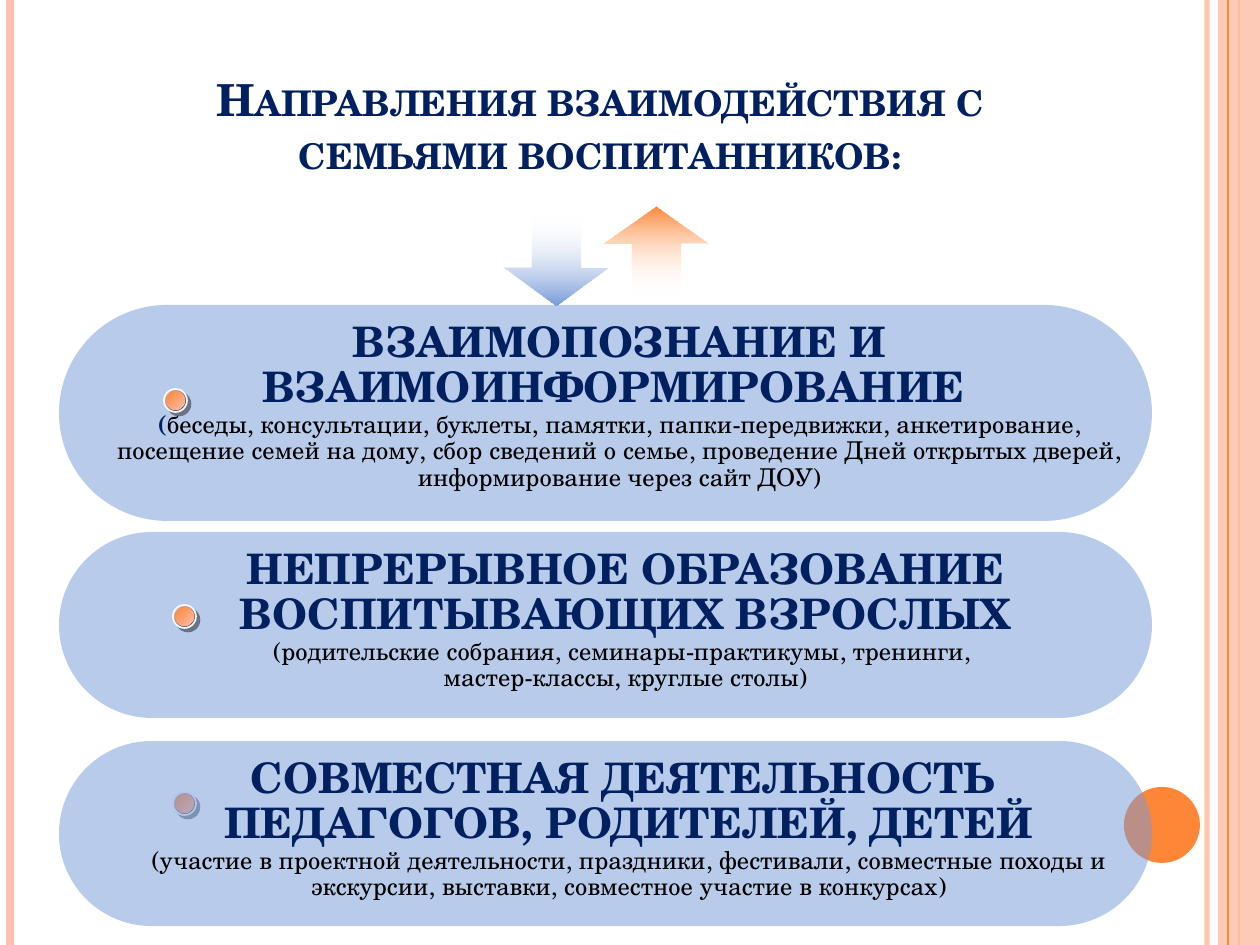
from lxml.etree import SubElement
from pptx import Presentation
from pptx.dml.color import RGBColor
from pptx.enum.shapes import MSO_CONNECTOR, MSO_SHAPE
from pptx.enum.text import MSO_ANCHOR, MSO_AUTO_SIZE, PP_ALIGN
from pptx.oxml.ns import qn
from pptx.util import Pt

PX = 914400 / 126
FONT = "TeX Gyre Schola"
COLORS = {
    "white": "FFFFFF", "black": "000000", "navy": "002060", "blue": "7598D9",
    "orange": "FE8637", "peach": "FEC3AE", "dot_light": "FEBEA8",
    "rim_light": "DDDDE1", "rim_dark": "223864", "rim_line": "F8F8F8",
    "shadow": "1C1C1C",
}
# pill (top, height), text box, dot corner, paragraphs of (text, style) runs
DIRECTIONS = [
    ((305, 216), (98, 315, 1043, 184), (164, 389), [
        [("ВЗАИМОПОЗНАНИЕ И ВЗАИМОИНФОРМИРОВАНИЕ ", "head")],
        [("(", "bracket"),
         ("беседы, консультации, буклеты, памятки, папки-передвижки, "
          "анкетирование, посещение семей на дому, сбор сведений о семье, "
          "проведение Дней открытых дверей, информирование через сайт ДОУ)",
          "detail")],
    ]),
    ((532, 186), (168, 542, 915, 158), (173, 605), [
        [("НЕПРЕРЫВНОЕ ОБРАЗОВАНИЕ ВОСПИТЫВАЮЩИХ ВЗРОСЛЫХ", "head")],
        [("(родительские собрания, семинары-практикумы, тренинги, ", "detail")],
        [("мастер-классы, круглые столы)", "detail")],
    ]),
    ((741, 185), (137, 751, 984, 158), (173, 792), [
        [("СОВМЕСТНАЯ ДЕЯТЕЛЬНОСТЬ ", "head")],
        [("ПЕДАГОГОВ, РОДИТЕЛЕЙ, ДЕТЕЙ", "head")],
        [("(участие в проектной деятельности, праздники, фестивали, совместные "
          "походы и экскурсии, выставки, совместное участие в конкурсах)",
          "detail")],
    ]),
]
STYLES = {"title": (25.2, "navy", True), "head": (24, "navy", True),
          "bracket": (14, "navy", True), "detail": (14, "black", False)}


def px(*lengths):
    return [round(n * PX) for n in lengths]


def rgb(name):
    return RGBColor.from_string(COLORS[name])


def set_alpha(color_element, percent):
    SubElement(color_element, qn("a:alpha"), val=str(percent * 1000))


def add_shape(shapes, kind, box, color=None, alpha=100):
    s = shapes.add_shape(kind, *px(*box))
    s.shadow.inherit = False
    s.line.fill.background()
    if color:
        s.fill.solid()
        s.fill.fore_color.rgb = rgb(color)
        if alpha < 100:
            set_alpha(next(s._element.spPr.iter(qn("a:srgbClr"))), alpha)
    return s


def set_gradient(s, start, end, angle):
    """Linear gradient; the angle runs counter-clockwise."""
    s.fill.gradient()
    s.fill.gradient_angle = angle
    for stop, name in zip(s.fill.gradient_stops, (start, end)):
        stop.color.rgb = rgb(name)


def add_run(p, text, style):
    r = p.add_run()
    r.text = text
    r.font.name = FONT
    size, color, r.font.bold = STYLES[style]
    r.font.size = Pt(size)
    r.font.color.rgb = rgb(color)
    return r


def add_rule(shapes, x, height, color, width, alpha=100):
    c = shapes.add_connector(MSO_CONNECTOR.STRAIGHT, *px(x, 0, x, height))
    c.line.color.rgb = rgb(color)
    c.line.width = Pt(width)
    spPr = c._element.spPr
    if alpha < 100:
        set_alpha(next(spPr.iter(qn("a:srgbClr"))), alpha)
    SubElement(spPr, qn("a:effectLst"))


def add_frame(shapes, width, height):
    """Vertical rules, side band and corner disc."""
    add_rule(shapes, width - 53, height, "peach", 3, 93)
    add_rule(shapes, 10, height, "peach", 4.5)
    add_rule(shapes, width - 21, height, "orange", 1.5)
    add_shape(shapes, MSO_SHAPE.RECTANGLE, (width - 42, 0, 42, height), "peach", 87)
    add_rule(shapes, width - 32, height, "orange", 0.75)
    add_shape(shapes, MSO_SHAPE.OVAL, (width - 136, height - 158, 76, 76), "orange")


def set_title(title, box, text):
    title.left, title.top, title.width, title.height = px(*box)
    tf = title.text_frame
    tf.auto_size = MSO_AUTO_SIZE.NONE
    tf.vertical_anchor = MSO_ANCHOR.BOTTOM
    p = tf.paragraphs[0]
    p.alignment = PP_ALIGN.CENTER
    r = add_run(p, text, "title")
    r.font._element.set("cap", "small")


def add_arrow(shapes, kind, box, color, angle):
    """Block arrow fading in from its tail."""
    s = add_shape(shapes, kind, box)
    s.adjustments[0], s.adjustments[1] = 0.465, 0.421
    set_gradient(s, "white", color, angle)
    set_alpha(next(s._element.spPr.iter(qn("a:srgbClr"))), 0)


def add_dot(shapes, x, y):
    group = shapes.add_group_shape().shapes
    rim = add_shape(group, MSO_SHAPE.OVAL, (x, y, 23, 23))
    set_gradient(rim, "rim_light", "rim_dark", 315)
    rim.line.color.rgb = rgb("rim_line")
    rim.line.width = Pt(1)
    effects = rim._element.spPr.find(qn("a:effectLst"))
    shadow = SubElement(effects, qn("a:outerShdw"), blurRad="0",
                        dist=str(Pt(2.8)), dir="2700000", algn="ctr",
                        rotWithShape="0")
    set_alpha(SubElement(shadow, qn("a:srgbClr"), val=COLORS["shadow"]), 50)
    core = add_shape(group, MSO_SHAPE.OVAL, (x + 2, y + 2, 19, 19))
    set_gradient(core, "orange", "dot_light", 315)


def add_pill(shapes, box):
    s = add_shape(shapes, MSO_SHAPE.ROUNDED_RECTANGLE, box, "blue", 50)
    s.adjustments[0] = 0.5


def add_text(shapes, box, paragraphs):
    tf = shapes.add_textbox(*px(*box)).text_frame
    tf.word_wrap = True
    for i, runs in enumerate(paragraphs):
        p = tf.add_paragraph() if i else tf.paragraphs[0]
        p.alignment = PP_ALIGN.CENTER
        p.line_spacing = 0.9
        for text, style in runs:
            add_run(p, text, style)


def main():
    prs = Presentation()
    prs.slide_width, prs.slide_height = px(1260, 945)
    slide = prs.slides.add_slide(prs.slide_layouts[5])
    shapes = slide.shapes
    add_frame(shapes, 1260, 945)
    set_title(shapes.title, (108, 59, 984, 126),
              "Направления взаимодействия с семьями воспитанников:")
    add_arrow(shapes, MSO_SHAPE.DOWN_ARROW, (503, 215, 105, 91), "blue", 270)
    add_arrow(shapes, MSO_SHAPE.UP_ARROW, (603, 207, 105, 88), "orange", 90)
    *front_dots, back_dot = [dot for _, _, dot, _ in DIRECTIONS]
    add_dot(shapes, *back_dot)  # the last dot lies under its pill
    for (top, height), text_box, _, paragraphs in DIRECTIONS:
        add_pill(shapes, (59, top, 1093, height))
        add_text(shapes, text_box, paragraphs)
    for dot in front_dots:
        add_dot(shapes, *dot)
    prs.save("out.pptx")


if __name__ == "__main__":
    main()
